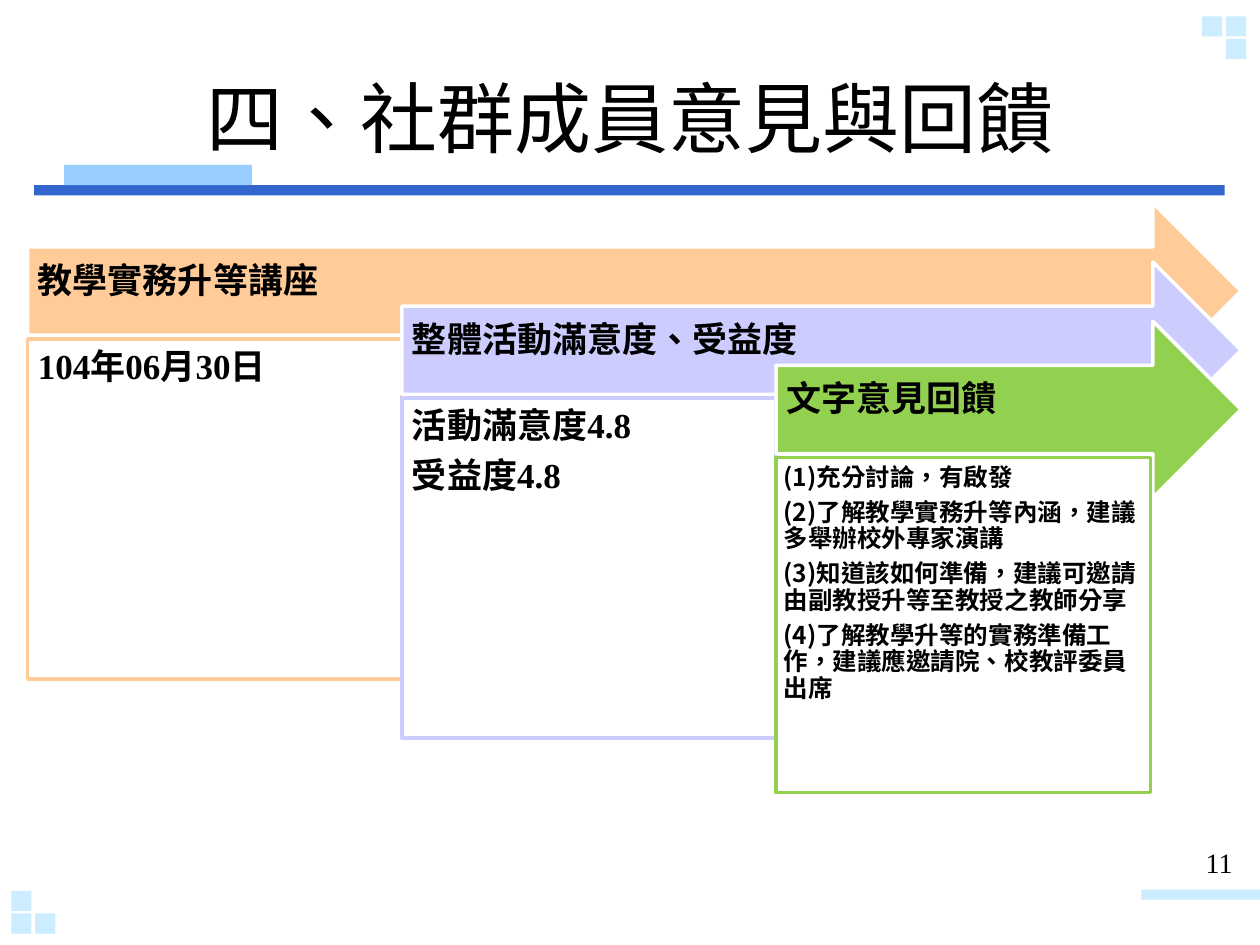
from pptx import Presentation
from pptx.dml.color import RGBColor
from pptx.enum.shapes import MSO_SHAPE
from pptx.enum.text import MSO_ANCHOR, PP_ALIGN
from pptx.oxml.ns import qn
from pptx.util import Inches, Pt
from lxml import etree

RECT, ARROW = MSO_SHAPE.RECTANGLE, MSO_SHAPE.RIGHT_ARROW
TOP, MIDDLE = MSO_ANCHOR.TOP, MSO_ANCHOR.MIDDLE
LEFT, CENTER, RIGHT = PP_ALIGN.LEFT, PP_ALIGN.CENTER, PP_ALIGN.RIGHT

BLACK = RGBColor(0x00, 0x00, 0x00)
WHITE = RGBColor(0xFF, 0xFF, 0xFF)
BLUE = RGBColor(0x33, 0x66, 0xCC)
SKY = RGBColor(0x99, 0xCC, 0xFF)
PALE = RGBColor(0xCC, 0xEC, 0xFF)
ORANGE = RGBColor(0xFF, 0xCC, 0x99)
LILAC = RGBColor(0xCC, 0xCC, 0xFF)
GREEN = RGBColor(0x92, 0xD0, 0x50)

CJK = "Noto Sans CJK SC"
SERIF = "Times New Roman"

STAGES = [
    dict(color=ORANGE, heading="教學實務升等講座", lines=["104年06月30日"],
         size=20, latin=SERIF, inset=0.08, height=2.7),
    dict(color=LILAC, heading="整體活動滿意度、受益度",
         lines=["活動滿意度4.8", "受益度4.8"],
         size=20, latin=SERIF, inset=0.08, height=2.7),
    dict(color=GREEN, heading="文字意見回饋",
         lines=["(1)充分討論，有啟發",
                "(2)了解教學實務升等內涵，建議多舉辦校外專家演講",
                "(3)知道該如何準備，建議可邀請由副教授升等至教授之教師分享",
                "(4)了解教學升等的實務準備工作，建議應邀請院、校教評委員出席"],
         size=14, latin=CJK, inset=0.06, height=2.66),
]


def add_box(slide, kind, box, fill, line=None):
    sp = slide.shapes.add_shape(kind, *map(Inches, box))
    sp.shadow.inherit = False
    sp.fill.solid()
    sp.fill.fore_color.rgb = fill
    if line is None:
        sp.line.fill.background()
    else:
        sp.line.color.rgb = line
        sp.line.width = Pt(2)
    return sp


def write(tf, lines, size, latin=CJK, bold=False, align=LEFT, anchor=TOP,
          insets=(0.1, 0.05, 0.1, 0.05), spacing=None):
    """Fill a text frame; spacing is (line spacing, space after in ems)."""
    tf.word_wrap = True
    tf.vertical_anchor = anchor
    for side, inset in zip(("left", "top", "right", "bottom"), insets):
        setattr(tf, f"margin_{side}", Inches(inset))
    for i, text in enumerate(lines):
        p = tf.add_paragraph() if i else tf.paragraphs[0]
        p.alignment = align
        # Keep closing punctuation inside the frame
        p._p.get_or_add_pPr().set("hangingPunct", "0")
        if spacing:
            p.line_spacing = spacing[0]
            p.space_after = Pt(size * spacing[1])
        r = p.add_run()
        r.text = text
        for name, value in dict(name=latin, size=Pt(size), bold=bold).items():
            setattr(r.font, name, value)
        r.font.color.rgb = BLACK
        rPr = r._r.get_or_add_rPr()
        rPr.set("lang", "zh-TW")
        etree.SubElement(rPr, qn("a:ea")).set("typeface", CJK)


def add_squares(slide, left, top, cells):
    """Small squares at the given (column, row) cells."""
    for col, row in cells:
        add_box(slide, RECT, (left + col * 0.19, top + row * 0.18, 0.16, 0.16), PALE)


def add_decoration(slide):
    add_box(slide, RECT, (0.27, 1.47, 9.45, 0.08), BLUE)
    add_box(slide, RECT, (0.51, 1.31, 1.49, 0.16), SKY)
    add_box(slide, RECT, (9.06, 7.06, 0.94, 0.08), PALE)
    add_squares(slide, 9.54, 0.13, [(0, 0), (1, 0), (1, 1)])
    add_squares(slide, 0.09, 7.07, [(0, 0), (0, 1), (1, 1)])


def add_title(slide, box, text):
    title = slide.shapes.title
    title.left, title.top, title.width, title.height = map(Inches, box)
    write(title.text_frame, [text], 44, align=CENTER, anchor=MIDDLE)


def add_page_number(slide, box, number):
    sp = slide.shapes.add_textbox(*map(Inches, box))
    write(sp.text_frame, [number], 16, SERIF, align=RIGHT)


def add_stages(slide, left, top, right):
    """Overlapping arrows that step down to the right, each with its panel."""
    panel_width, step_down, panel_drop = 2.97, 0.47, 1.08
    spacing = (0.9, 0.35)
    for i, stage in enumerate(STAGES):
        x, y = left + i * panel_width, top + i * step_down
        arrow = add_box(slide, ARROW, (x, y, right - x, 1.4), stage["color"], WHITE)
        write(arrow.text_frame, [stage["heading"]], 20, bold=True, anchor=MIDDLE,
              insets=(0.08, 0.08, 0.28, 0.22), spacing=spacing)
        panel = add_box(slide, RECT, (x, y + panel_drop, panel_width, stage["height"]),
                        WHITE, stage["color"])
        write(panel.text_frame, stage["lines"], stage["size"], stage["latin"],
              bold=True, insets=(stage["inset"],) * 4, spacing=spacing)


def main():
    prs = Presentation()
    prs.slide_width, prs.slide_height = Inches(10), Inches(7.5)
    slide = prs.slides.add_slide(prs.slide_layouts[5])
    add_decoration(slide)
    add_title(slide, (0.5, 0.3, 9, 1.25), "四、社群成員意見與回饋")
    add_page_number(slide, (9.25, 6.66, 0.63, 0.39), "11")
    add_stages(slide, 0.22, 1.61, 9.85)
    prs.save("out.pptx")


if __name__ == "__main__":
    main()
